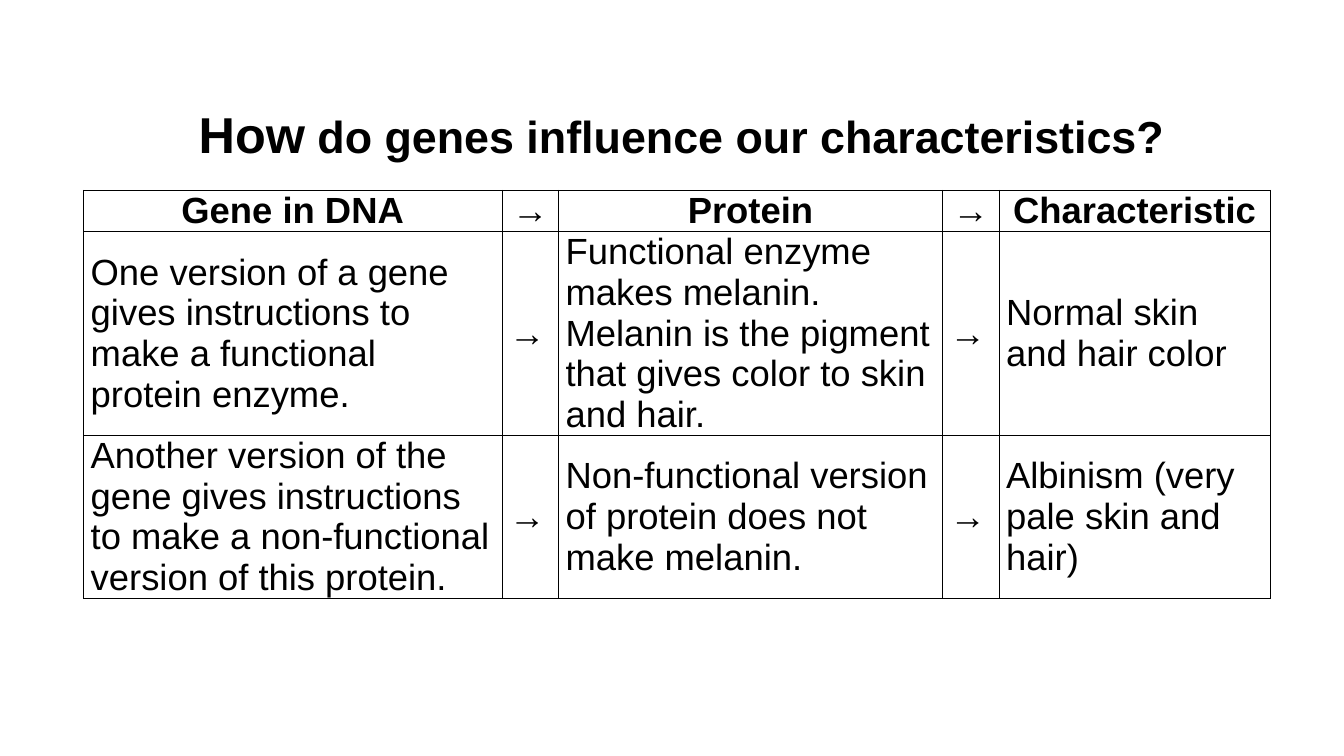
import pptx
import pptx.util
import pptx.dml.color
import pptx.enum.text
import pptx.oxml.ns
import lxml.etree

Inches = pptx.util.Inches
Pt = pptx.util.Pt
ALIGN = pptx.enum.text.PP_ALIGN
MIDDLE = pptx.enum.text.MSO_ANCHOR.MIDDLE
BLACK, WHITE = "000000", "FFFFFF"


def paint(fmt, tone):
    """Give a fill a solid colour from a hex string."""
    fmt.solid()
    fmt.fore_color.rgb = pptx.dml.color.RGBColor.from_string(tone)


def write(para, text, size, bold):
    run = para.add_run()
    run.text = text
    look = {"name": "Arial", "size": Pt(size), "bold": bold}
    for key, val in look.items():
        setattr(run.font, key, val)
    paint(run.font.fill, BLACK)


deck = pptx.Presentation()
deck.slide_width, deck.slide_height = Inches(13.33), Inches(7.5)
slide = deck.slides.add_slide(deck.slide_layouts[5])
paint(slide.background.fill, WHITE)

# Title
title = slide.shapes.title
place = {"left": 1.87, "top": 0.97, "width": 9.85, "height": 0.71}
for key, val in place.items():
    setattr(title, key, Inches(val))
frame = title.text_frame
form = {"word_wrap": False, "vertical_anchor": MIDDLE,
        "auto_size": pptx.enum.text.MSO_AUTO_SIZE.NONE}
for key, val in form.items():
    setattr(frame, key, val)
head = frame.paragraphs[0]
head.alignment = ALIGN.LEFT
write(head, "How", 36, True)
write(head, " do genes influence our characteristics?", 32, True)

# Table: arrows stand between the three text columns
ARROW = "→"
widths = [4.15, 0.56, 3.81, 0.56, 2.69]
heights = [0.41, 2.01, 1.62]
rows = [
    ["Gene in DNA", "Protein", "Characteristic"],
    ["One version of a gene gives instructions to make a functional "
     "protein enzyme.",
     "Functional enzyme makes melanin. Melanin is the pigment that gives "
     "color to skin and hair.",
     "Normal skin and hair color"],
    ["Another version of the gene gives instructions to make a "
     "non-functional version of this protein.",
     "Non-functional version of protein does not make melanin.",
     "Albinism (very pale skin and hair)"],
]
grid = slide.shapes.add_table(
    len(rows), len(widths), Inches(0.83), Inches(1.89),
    Inches(sum(widths)), Inches(sum(heights))).table
for col, width in zip(grid.columns, widths):
    col.width = Inches(width)
for row, height in zip(grid.rows, heights):
    row.height = Inches(height)

inset = {"margin_left": Inches(0.07), "margin_right": Inches(0.07),
         "margin_top": 0, "margin_bottom": 0, "vertical_anchor": MIDDLE}
for r, (gene, protein, trait) in enumerate(rows):
    for c, text in enumerate([gene, ARROW, protein, ARROW, trait]):
        cell = grid.cell(r, c)
        for key, val in inset.items():
            setattr(cell, key, val)
        para = cell.text_frame.paragraphs[0]
        para.alignment = ALIGN.CENTER if r == 0 else ALIGN.LEFT
        write(para, text, 26, r == 0 or text == ARROW)
        props = cell._tc.get_or_add_tcPr()
        for side in ("a:lnL", "a:lnR", "a:lnT", "a:lnB"):
            line = lxml.etree.SubElement(
                props, pptx.oxml.ns.qn(side), w=str(Pt(1)))
            fill = lxml.etree.SubElement(line, pptx.oxml.ns.qn("a:solidFill"))
            lxml.etree.SubElement(
                fill, pptx.oxml.ns.qn("a:srgbClr"), val=BLACK)
        paint(cell.fill, WHITE)

deck.save("out.pptx")
